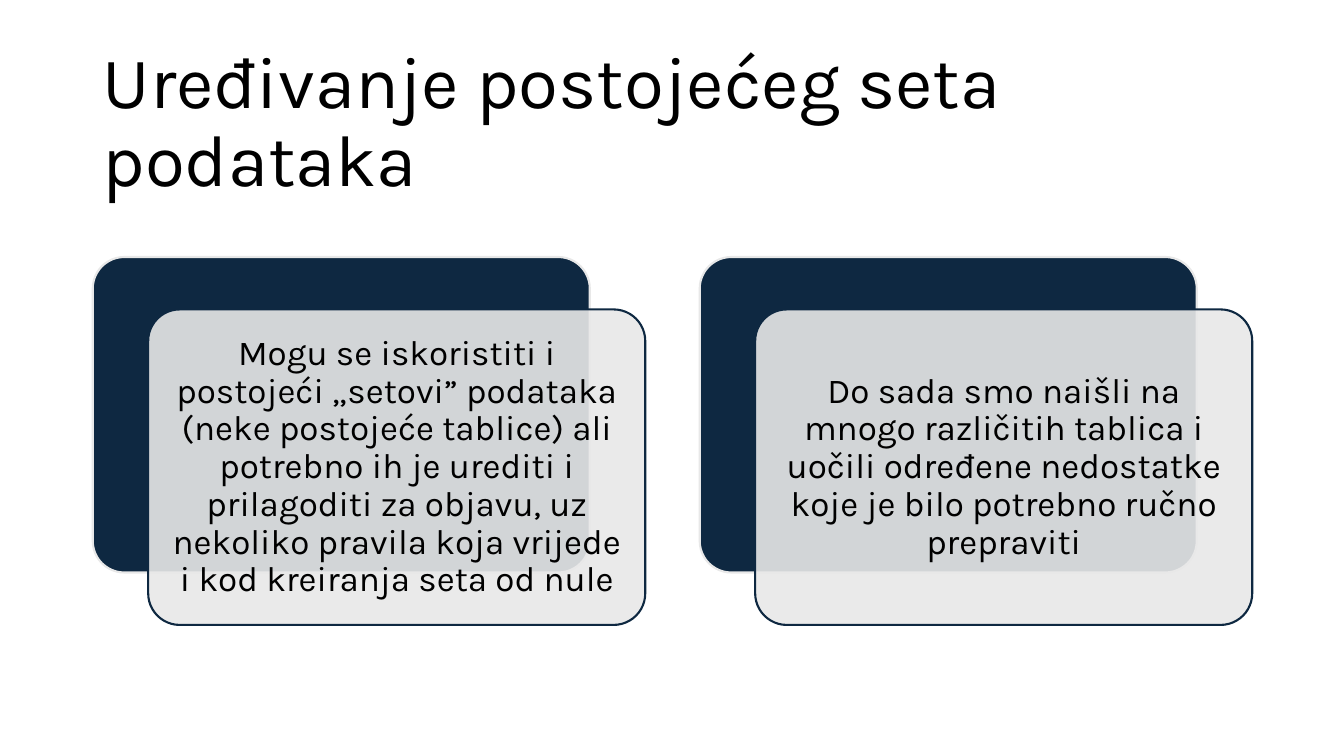
from dataclasses import dataclass

from lxml.etree import SubElement
from pptx import Presentation
from pptx.dml.color import RGBColor as Rgb
from pptx.enum.shapes import MSO_SHAPE as Kind
from pptx.enum.text import MSO_ANCHOR as Anchor, PP_ALIGN as Align
from pptx.oxml.ns import qn
from pptx.util import Emu, Pt

SCALE = 9144  # EMU in one px, 100 px to the inch


@dataclass(frozen=True)
class Theme:
    font: str = "Karla"
    ink: Rgb = Rgb(0x00, 0x00, 0x00)
    navy: Rgb = Rgb(0x0E, 0x28, 0x41)
    pale: Rgb = Rgb(0xE8, 0xE8, 0xE8)
    title: int = 52
    body: int = 25
    line: float = 1.5
    round: float = 0.1
    alpha: int = 90


THEME = Theme()
NOTES = [
    "Mogu se iskoristiti i postojeći „setovi” podataka (neke postojeće tablice) "
    "ali potrebno ih je urediti i prilagoditi za objavu, uz nekoliko pravila "
    "koja vrijede i kod kreiranja seta od nule",
    "Do sada smo naišli na mnogo različitih tablica i uočili određene nedostatke "
    "koje je bilo potrebno ručno prepraviti",
]


def px(*nums):
    return [Emu(n * SCALE) for n in nums]


def add_text(slide, box, text, size, align, pad):
    frame = slide.shapes.add_textbox(*px(*box)).text_frame
    frame.word_wrap = True
    frame.vertical_anchor = Anchor.MIDDLE
    frame.margin_left, frame.margin_top = px(*pad)
    frame.margin_right, frame.margin_bottom = px(*pad)
    para = frame.paragraphs[0]
    para.text = text
    para.alignment = align
    para.line_spacing = 0.9
    para.font.name = THEME.font
    para.font.size = Pt(size)
    para.font.color.rgb = THEME.ink


def add_panel(slide, box, fill, edge, alpha=100):
    panel = slide.shapes.add_shape(Kind.ROUNDED_RECTANGLE, *px(*box))
    panel.adjustments[0] = THEME.round
    panel.shadow.inherit = False
    panel.fill.solid()
    panel.fill.fore_color.rgb = fill
    panel.line.color.rgb = edge
    panel.line.width = Pt(THEME.line)
    if alpha < 100:
        tint = panel.element.spPr.find(qn("a:solidFill"))[0]
        SubElement(tint, qn("a:alpha")).set("val", str(alpha * 1000))


def add_card(slide, box, text):
    left, top, wide, high = box
    shift, drop, inset = 55, 52, 9
    # Dark panel behind
    wide, high = wide - shift, high - drop
    add_panel(slide, (left, top, wide, high), THEME.navy, THEME.pale)
    # Clear panel in front
    left, top = left + shift, top + drop
    add_panel(slide, (left, top, wide, high), THEME.pale, THEME.navy, THEME.alpha)
    # Text within the front panel
    inner = (left + inset, top + inset, wide - 2 * inset, high - 2 * inset)
    add_text(slide, inner, text, THEME.body, Align.CENTER, (10, 10))


def add_cards(slide, box, notes):
    left, top, wide, high = box
    gap = 54
    card = (wide - gap * (len(notes) - 1)) // len(notes)
    for i, note in enumerate(notes):
        add_card(slide, (left + i * (card + gap), top, card, high), note)


def main():
    deck = Presentation()
    deck.slide_width, deck.slide_height = px(1333, 750)
    slide = deck.slides.add_slide(deck.slide_layouts[6])
    # Title
    add_text(slide, (92, 61, 1150, 124), "Uređivanje postojećeg seta podataka",
             THEME.title, Align.LEFT, (10, 5))
    # Pair of cards
    add_cards(slide, (92, 255, 1150, 365), NOTES)
    deck.save("out.pptx")


if __name__ == "__main__":
    main()
